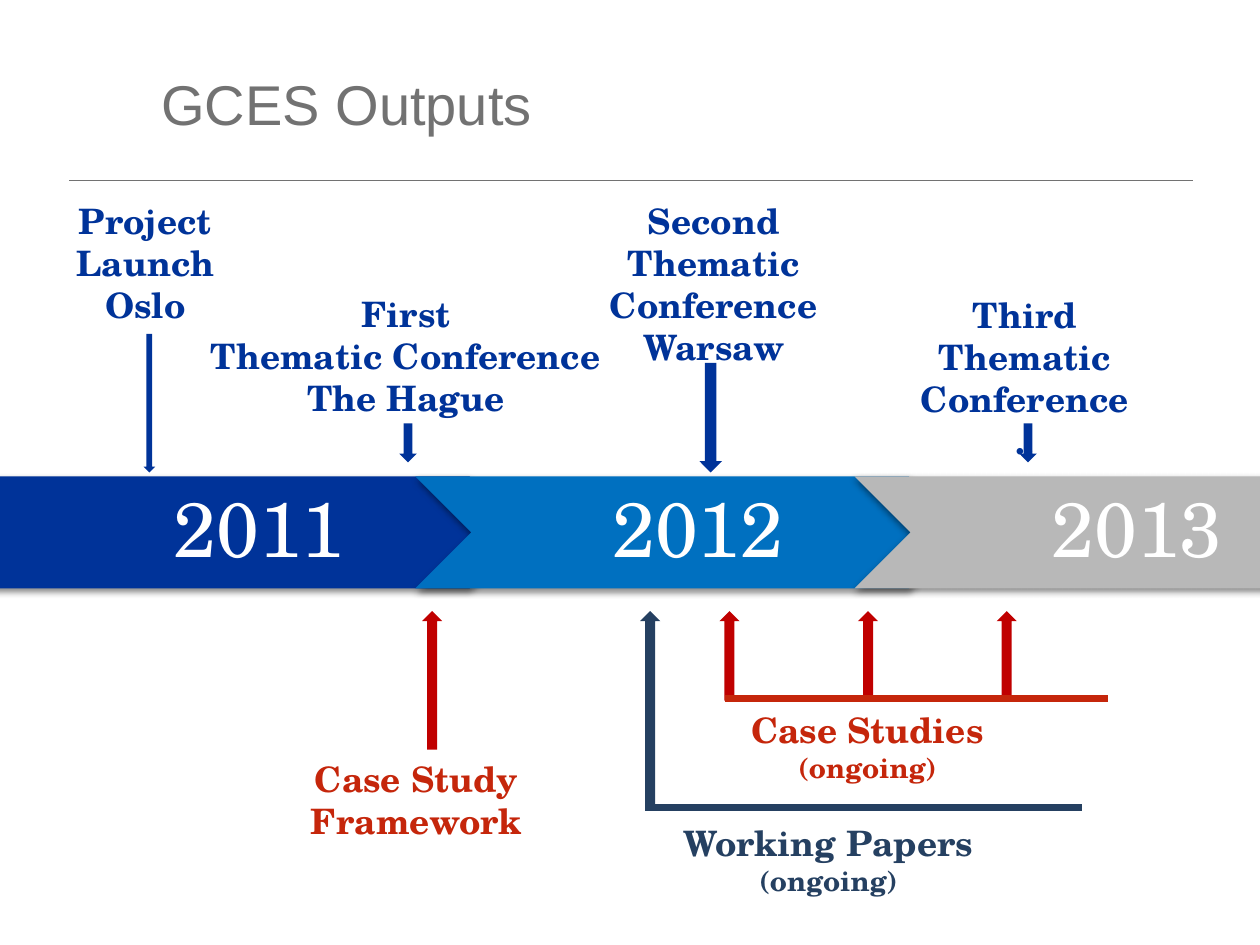
from dataclasses import dataclass
from lxml import etree
from pptx import Presentation
from pptx.dml.color import RGBColor
from pptx.enum import shapes, text
from pptx.oxml import ns
from pptx.util import Pt

KIND = shapes.MSO_SHAPE


@dataclass(frozen=True)
class Theme:
    """Colours, fonts and type sizes."""
    navy: str = "003399"
    blue: str = "0070C0"
    silver: str = "B8B8B8"
    grey: str = "727272"
    red: str = "C00000"
    rust: str = "C5260B"
    slate: str = "254061"
    white: str = "FFFFFF"
    sans: str = "Arial"
    serif: str = "TeX Gyre Schola"
    title: int = 32
    year: int = 44
    label: int = 20
    note: int = 16


THEME = Theme()


def style(run, font, size, color, bold=False):
    """Format one run."""
    run.font.name, run.font.size, run.font.bold = font, Pt(size), bold
    run.font.color.rgb = RGBColor.from_string(color)


def shape(slide, kind, box, color):
    """Add a plain filled shape."""
    item = slide.shapes.add_shape(kind, *map(Pt, box))
    item.shadow.inherit = False
    item.fill.solid()
    item.fill.fore_color.rgb = RGBColor.from_string(color)
    item.line.fill.background()
    return item


def rule(slide, x, y, end, color, width):
    """Add a level line."""
    line = slide.shapes.add_connector(
        shapes.MSO_CONNECTOR.STRAIGHT, Pt(x), Pt(y), Pt(end), Pt(y))
    line.line.color.rgb = RGBColor.from_string(color)
    line.line.width = Pt(width)
    etree.SubElement(line._element.spPr, ns.qn("a:effectLst"))


def shade(item):
    """Give a shape a soft shadow below it."""
    glow = item._element.spPr.find(ns.qn("a:effectLst"))
    drop = etree.SubElement(glow, ns.qn("a:outerShdw"), blurRad=str(Pt(4)),
                            dist=str(Pt(2)), dir="5400000", rotWithShape="0")
    ink = etree.SubElement(drop, ns.qn("a:srgbClr"), val="000000")
    etree.SubElement(ink, ns.qn("a:alpha"), val="45000")


def label(slide, box, words, color, top=3.6):
    """Add a centred bold label, with bracketed notes smaller."""
    item = slide.shapes.add_textbox(*map(Pt, box))
    frame = item.text_frame
    frame.word_wrap = True
    frame.margin_top = Pt(top)
    frame.text = words
    for para in frame.paragraphs:
        para.alignment = text.PP_ALIGN.CENTER
        for run in para.runs:
            size = THEME.note if run.text.startswith("(") else THEME.label
            style(run, THEME.serif, size, color, True)


def head(slide, box):
    """Place the title and the rule below it."""
    x, y, w, h = box
    title = slide.shapes.title
    title.left, title.top, title.width, title.height = map(
        Pt, (x + 45.4, y, 584, 80.6))
    frame = title.text_frame
    frame.text = "GCES Outputs"
    frame.vertical_anchor = text.MSO_ANCHOR.MIDDLE
    para = frame.paragraphs[0]
    para.alignment = text.PP_ALIGN.LEFT
    style(para.runs[0], THEME.sans, THEME.title, THEME.grey)
    rule(slide, x, y + h, x + w, THEME.grey, 0.5)


def band(slide, box):
    """Place the row of years."""
    x, y, w, h = box
    step = 251
    years = [("2011", KIND.PENTAGON, THEME.navy, 0, 297, 31),
             ("2012", KIND.CHEVRON, THEME.blue, 32.4, 249, 13.7),
             ("2013", KIND.CHEVRON, THEME.silver, 32.4, 249, 13.7)]
    for i, (year, kind, color, shift, wide, inset) in enumerate(years):
        left = x + i * step
        shade(shape(slide, kind, (left, y, w - 2 * step, h), color))
        item = slide.shapes.add_textbox(*map(Pt, (left + shift, y, wide, h)))
        frame = item.text_frame
        frame.word_wrap = True
        frame.vertical_anchor = text.MSO_ANCHOR.MIDDLE
        frame.margin_left, frame.margin_right = Pt(inset), Pt(4.3)
        frame.margin_top = frame.margin_bottom = Pt(9.4)
        frame.text = year
        para = frame.paragraphs[0]
        para.alignment = text.PP_ALIGN.CENTER
        para.line_spacing = 0.9
        style(para.runs[0], THEME.serif, THEME.year, THEME.white)


def events(slide, box):
    """Place the events above the years, each with an arrow down."""
    x, y, w, h = box
    items = [
        ("Project Launch\nOslo", (5, 0, 156.2, 78), (82.1, 80.6, 6.5, 79.2)),
        ("First\vThematic Conference\nThe Hague", (95.8, 53.2, 272.2, 73),
         (228.2, 131.7, 10, 22.3)),
        ("Second\vThematic Conference\nWarsaw", (291.6, 0, 232.6, 102),
         (399.6, 97.2, 13, 62.6)),
        ("Third\vThematic Conference\n..", (476.6, 54, 218.2, 104.4),
         (582.5, 131.7, 10, 22.3))]
    for words, (left, top, *size), (across, down, *span) in items:
        label(slide, (x + left, y + top, *size), words, THEME.navy)
        shape(slide, KIND.DOWN_ARROW, (x + across, y + down, *span), THEME.navy)


def works(slide, box):
    """Place the outputs below the years, each with arrows up."""
    x, y, w, h = box
    arrows = [(241.2, 79.2, THEME.red), (365.8, 113, THEME.slate)]
    arrows += [(411.1 + i * 79.2, 51.1, THEME.red) for i in range(3)]
    for left, tall, color in arrows:
        shape(slide, KIND.UP_ARROW, (x + left, y, 11.5, tall), color)
    rule(slide, x + 368.6, y + 112.3, x + 618.5, THEME.slate, 4)
    rule(slide, x + 414, y + 49.7, x + 632.9, THEME.rust, 4)
    label(slide, (x + 161.3, y + 79.9, 153.4, 55.4), "Case Study Framework",
          THEME.rust)
    label(slide, (x + 351.4, y + 116.6, 244, 48.2),
          "Working Papers\v(ongoing)", THEME.slate)
    label(slide, (x + 385.2, y + 39.6, 221, 60.5),
          "Case Studies\v(ongoing)", THEME.rust, 16)


def main():
    """Build and save the slide."""
    deck = Presentation()
    deck.slide_width, deck.slide_height = Pt(720), Pt(540)
    slide = deck.slides.add_slide(deck.slide_layouts[5])
    head(slide, (39.6, 18.7, 642.2, 84.3))
    band(slide, (-13.7, 272.2, 816, 64))
    events(slide, (0, 110.2, 720, 160))
    works(slide, (0, 349.2, 720, 165))
    deck.save("out.pptx")


if __name__ == "__main__":
    main()
